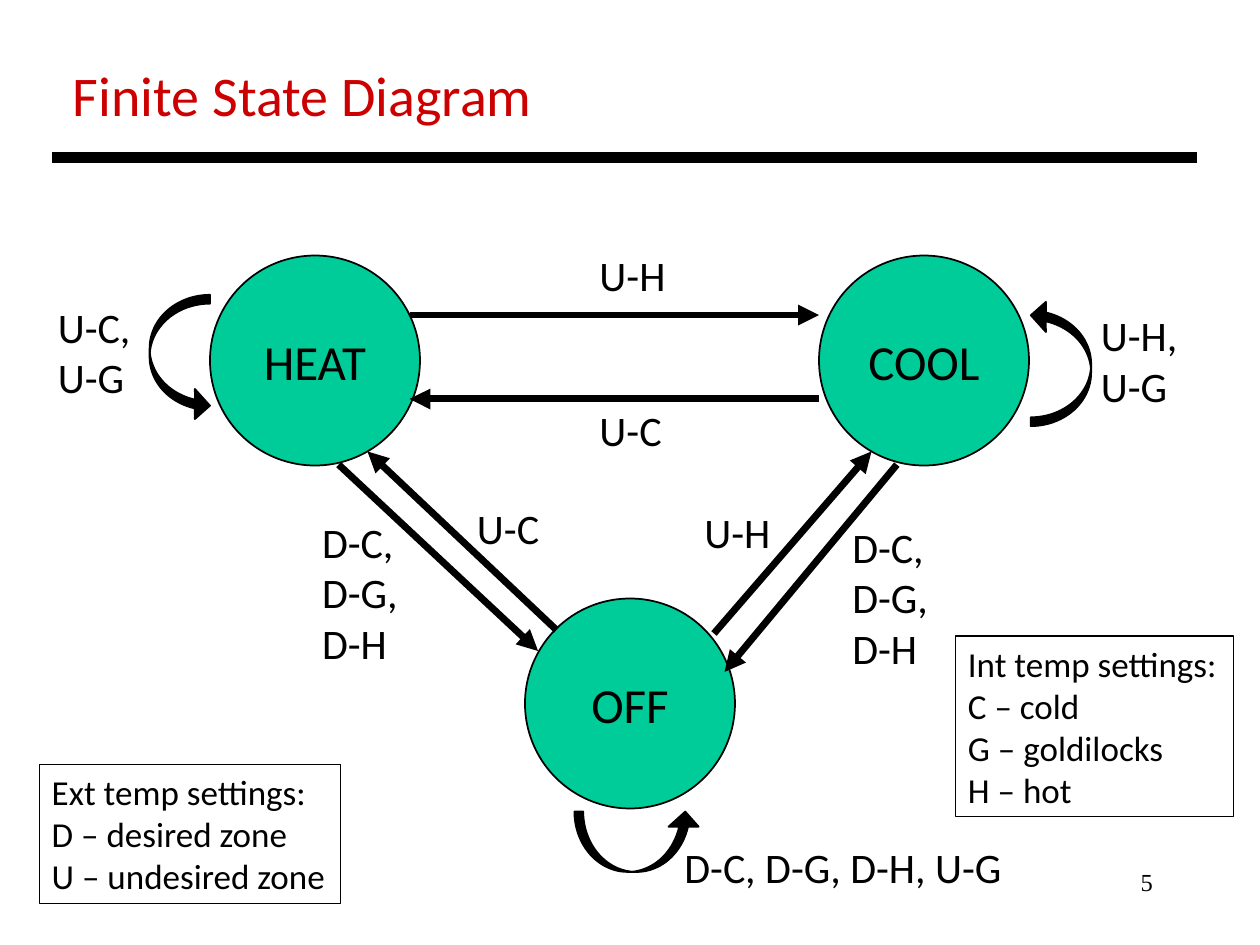
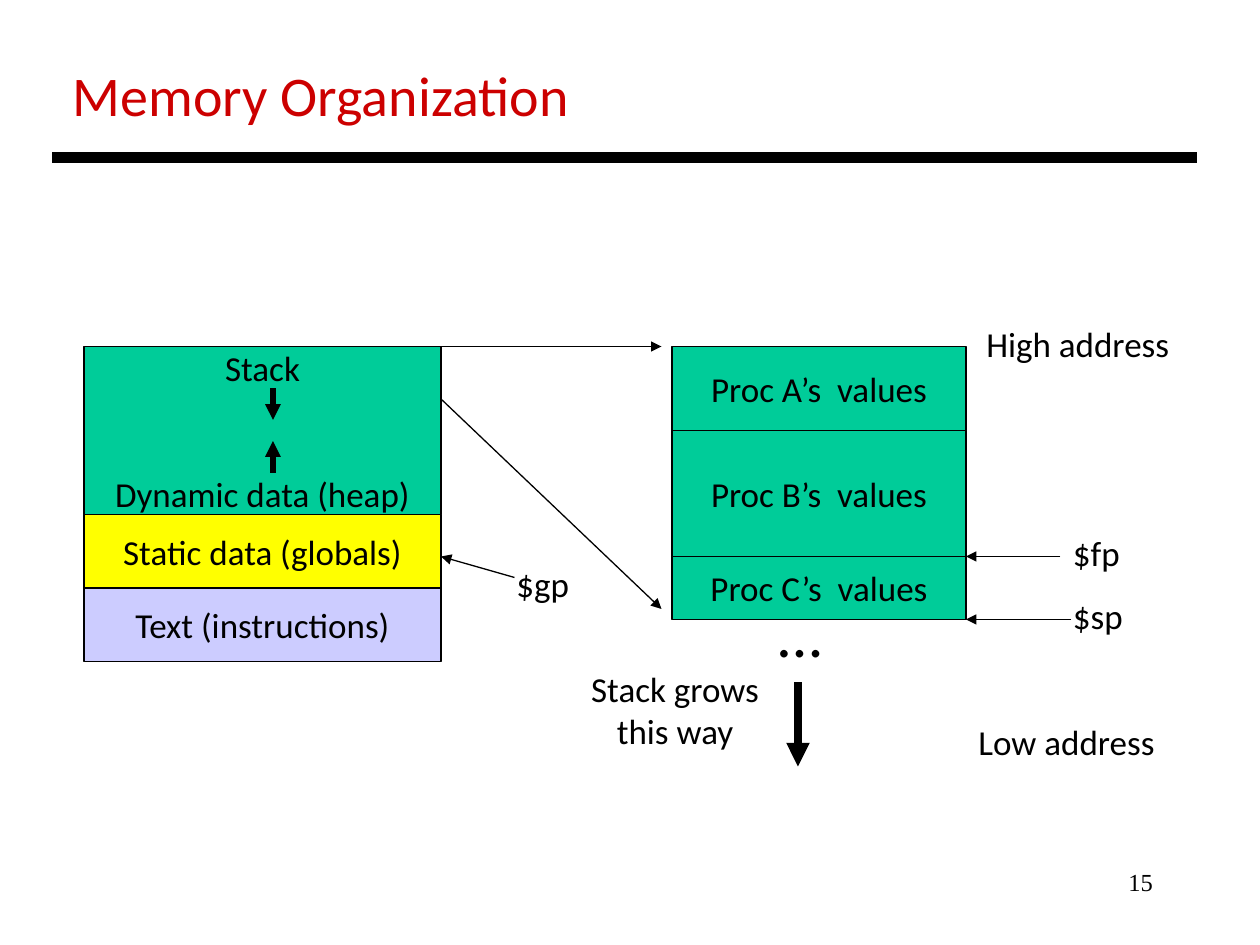
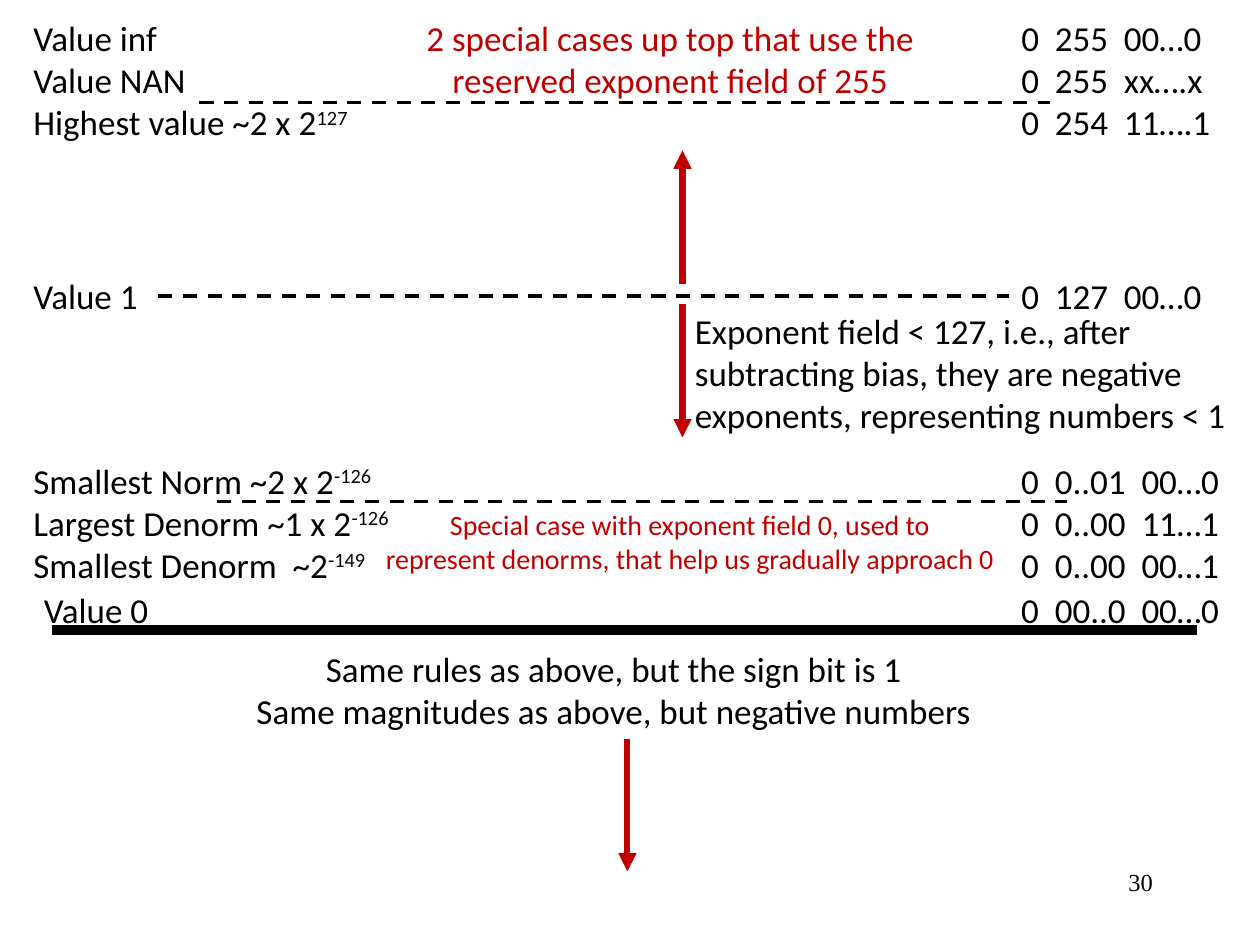
"""Build three lecture slides: a state diagram, a memory map and a float number line."""
from dataclasses import dataclass

from lxml import etree
from pptx import Presentation
from pptx.dml.color import RGBColor
from pptx.enum import dml, shapes, text
from pptx.oxml import ns
from pptx.util import Pt

LEFT, CENTER, RIGHT = text.PP_ALIGN.LEFT, text.PP_ALIGN.CENTER, text.PP_ALIGN.RIGHT
TOP, MIDDLE = text.MSO_ANCHOR.TOP, text.MSO_ANCHOR.MIDDLE
TITLE_ONLY, BLANK = 5, 6


@dataclass(frozen=True)
class Theme:
    """Colours, fonts and type sizes shared by the slides."""
    ink: RGBColor = RGBColor(0x00, 0x00, 0x00)
    title: RGBColor = RGBColor(0xCC, 0x00, 0x00)
    accent: RGBColor = RGBColor(0xC0, 0x00, 0x00)
    green: RGBColor = RGBColor(0x00, 0xCC, 0x99)
    yellow: RGBColor = RGBColor(0xFF, 0xFF, 0x00)
    lilac: RGBColor = RGBColor(0xCC, 0xCC, 0xFF)
    font: str = "Calibri"
    number_font: str = "Times New Roman"
    title_size: int = 32
    state_size: int = 28
    event_size: int = 24
    body_size: int = 20
    note_size: int = 16
    number_size: int = 14
    dots_size: int = 36


THEME = Theme()


def apply(target, values):
    """Set every attribute named in a dict of format values."""
    for name, value in values.items():
        setattr(target, name, value)


def write(frame, content, size, color=THEME.ink, align=LEFT, anchor=TOP, font=THEME.font):
    """Fill a text frame line by line; a caret starts a superscript."""
    apply(frame, {"word_wrap": False, "vertical_anchor": anchor})
    for index, line in enumerate(content.split("\n")):
        paragraph = frame.paragraphs[0] if index == 0 else frame.add_paragraph()
        paragraph.alignment = align
        base, _, power = line.partition("^")
        for part, baseline in ((base, 0), (power, 30000)):
            if not part:
                continue
            run = paragraph.add_run()
            run.text = part
            apply(run.font, {"name": font, "size": Pt(size), "bold": False})
            run.font.color.rgb = color
            if baseline:
                run.font._element.set("baseline", str(baseline))


def text_height(content, size):
    """Return the height in points of a box that fits the lines."""
    return (content.count("\n") + 1) * size * 1.2 + 7.2


def label(slide, left, top, width, content, size=THEME.body_size, **style):
    """Add free text in a box that fits it."""
    height = text_height(content, size)
    box = slide.shapes.add_textbox(Pt(left), Pt(top), Pt(width), Pt(height))
    write(box.text_frame, content, size, **style)
    box.text_frame.auto_size = text.MSO_AUTO_SIZE.SHAPE_TO_FIT_TEXT
    return box


def figure(slide, preset, left, top, width, height, fill=None, weight=0.75):
    """Add a preset shape with a black outline."""
    shape = slide.shapes.add_shape(preset, Pt(left), Pt(top), Pt(width), Pt(height))
    shape.shadow.inherit = False
    if fill is None:
        shape.fill.background()
    else:
        shape.fill.solid()
        shape.fill.fore_color.rgb = fill
    shape.line.color.rgb = THEME.ink
    shape.line.width = Pt(weight)
    return shape


def line(slide, start, end, weight, color=THEME.ink, dashed=False):
    """Add a straight line between two points."""
    stroke = slide.shapes.add_connector(shapes.MSO_CONNECTOR.STRAIGHT, *map(Pt, start + end))
    stroke.line.color.rgb = color
    stroke.line.width = Pt(weight)
    if dashed:
        stroke.line.dash_style = dml.MSO_LINE.DASH
    etree.SubElement(stroke._element.spPr, ns.qn("a:effectLst"))
    return stroke


def arrow(slide, start, end, weight, color=THEME.ink):
    """Add a line with a triangle at its end."""
    stroke = line(slide, start, end, weight, color)
    etree.SubElement(stroke.line._get_or_add_ln(), ns.qn("a:tailEnd"), type="triangle")


def state(slide, name, left, top):
    """Add a state circle."""
    circle = figure(slide, shapes.MSO_SHAPE.OVAL, left, top, 120, 120, THEME.green, 1)
    write(circle.text_frame, name, THEME.state_size, align=CENTER, anchor=MIDDLE)


def self_loop(slide, left, top, rotation):
    """Add the curved arrow of a state that stays as it is."""
    loop = figure(slide, shapes.MSO_SHAPE.CURVED_RIGHT_ARROW, left, top, 34.5, 72, THEME.ink, 1)
    loop.rotation = rotation
    for index, value in enumerate((0.147, 0.5, 0.25)):
        loop.adjustments[index] = value


def legend(slide, left, top, width, content):
    """Add an outlined key."""
    height = text_height(content, THEME.body_size)
    key = figure(slide, shapes.MSO_SHAPE.RECTANGLE, left, top, width, height)
    write(key.text_frame, content, THEME.body_size)
    key.text_frame.auto_size = text.MSO_AUTO_SIZE.SHAPE_TO_FIT_TEXT


def memory_column(slide, left, top, width, regions):
    """Stack memory regions downwards and return them."""
    blocks = []
    for content, fill, height in regions:
        block = figure(slide, shapes.MSO_SHAPE.RECTANGLE, left, top, width, height, fill)
        write(block.text_frame, content, THEME.body_size, align=CENTER, anchor=MIDDLE)
        blocks.append(block)
        top += height
    return blocks


def new_slide(deck, number, title=None, rule_top=90):
    """Add a slide with its number, heavy rule and optional title."""
    slide = deck.slides.add_slide(deck.slide_layouts[TITLE_ONLY if title else BLANK])
    if title:
        heading = slide.shapes.title
        apply(heading, {"left": Pt(34.5), "top": Pt(31), "width": Pt(302), "height": Pt(46)})
        write(heading.text_frame, title, THEME.title_size, THEME.title)
        heading.text_frame.auto_size = text.MSO_AUTO_SIZE.NONE
    label(slide, 516, 492, 150, number, THEME.number_size, align=RIGHT, font=THEME.number_font)
    line(slide, (30, rule_top), (684, rule_top), 6)
    return slide


def state_diagram(deck):
    """Draw the thermostat states and their transitions."""
    slide = new_slide(deck, "5", "Finite State Diagram")
    for name, left, top in (("HEAT", 120, 146), ("COOL", 468, 146), ("OFF", 300, 342)):
        state(slide, name, left, top)
    for start, end in (
        ((234, 180), (468, 180)),
        ((468, 228), (234, 228)),
        ((318, 360), (210, 258)),
        ((408, 362), (498, 258)),
        ((512.5, 265.5), (414, 384)),
        ((193.5, 265.5), (307.5, 372)),
    ):
        arrow(slide, start, end, 4)
    for left, top, rotation in ((347, 445, 270), (589, 171.5, 180), (85.5, 168.5, 0)):
        self_loop(slide, left, top, rotation)
    for left, top, width, events in (
        (335.5, 139, 52.5, "U-H"),
        (335.5, 227.5, 50.5, "U-C"),
        (265.5, 283.5, 50.5, "U-C"),
        (395.5, 286, 52.5, "U-H"),
        (177, 291.5, 58.5, "D-C,\nD-G,\nD-H"),
        (480, 294.5, 58.5, "D-C,\nD-G,\nD-H"),
        (384, 477.5, 197, "D-C, D-G, D-H, U-G"),
        (26, 168.5, 56, "U-C,\nU-G"),
        (622, 173.5, 59, "U-H,\nU-G"),
    ):
        label(slide, left, top, width, events, THEME.event_size)
    legend(slide, 22.5, 437, 172, "Ext temp settings:\nD – desired zone\nU – undesired zone")
    legend(slide, 546, 363.5, 159, "Int temp settings:\nC – cold\nG – goldilocks\nH – hot")


def memory_map(deck):
    """Draw the memory layout and a close view of its stack."""
    slide = new_slide(deck, "15", "Memory Organization")
    stack_and_heap = memory_column(slide, 48, 198, 204, (
        ("Stack\nDynamic data (heap)", THEME.green, 96),
        ("Static data (globals)", THEME.yellow, 42),
        ("Text (instructions)", THEME.lilac, 42),
    ))[0]
    stack_and_heap.text_frame.paragraphs[1].space_before = Pt(48)
    memory_column(slide, 384, 198, 168, (
        ("Proc A’s  values", THEME.green, 48),
        ("Proc B’s  values", THEME.green, 72),
        ("Proc C’s  values", THEME.green, 36),
    ))
    for start, end, weight in (
        ((156, 222), (156, 240), 3),
        ((156, 270), (156, 252), 3),
        ((456, 390), (456, 438), 4.5),
        ((252, 198), (378, 198), 0.75),
        ((252, 228), (378, 348), 0.75),
        ((606, 318), (552, 318), 0.75),
        ((612, 354), (552, 354), 0.75),
        ((294, 330), (252, 318), 0.75),
    ):
        arrow(slide, start, end, weight)
    label(slide, 438, 336, 39.5, "…", THEME.dots_size)
    label(slide, 330, 378, 111.5, "Stack grows\nthis way", align=CENTER)
    for left, top, width, caption in (
        (556.5, 181, 120, "High address"),
        (552, 408, 116, "Low address"),
        (606, 300, 42.5, "$fp"),
        (606, 336, 43, "$sp"),
        (288, 318, 44.5, "$gp"),
    ):
        label(slide, left, top, width, caption)


def float_line(deck):
    """Draw the range of floating point values and their bit fields."""
    slide = new_slide(deck, "30", rule_top=360)
    for left, top, width, values in (
        (12, 6, 198, "Value inf\nValue NAN\nHighest value ~2 x 2^127"),
        (12, 153.5, 75, "Value 1"),
        (12, 259, 222.5, "Smallest Norm ~2 x 2^-126\nLargest Denorm ~1 x 2^-126\n"
                         "Smallest Denorm  ~2^-149"),
        (18, 332.5, 75, "Value 0"),
        (390, 173.5, 321, "Exponent field < 127, i.e., after\nsubtracting bias, they are negative\n"
                          "exponents, representing numbers < 1"),
    ):
        label(slide, left, top, width, values)
    bits_left = 576.5
    label(slide, bits_left, 6, 123, "0  255  00…0\n0  255  xx….x\n0  254  11….1")
    one_bits = label(slide, bits_left, 153.5, 118, "0  127  00…0")
    label(slide, bits_left, 259, 128, "0  0..01  00…0\n0  0..00  11…1\n0  0..00  00…1")
    label(slide, bits_left, 332.5, 128, "0  00..0  00…0")
    label(slide, 138, 366.5, 425.5, "Same rules as above, but the sign bit is 1\n"
          "Same magnitudes as above, but negative numbers", align=CENTER)
    label(slide, 235, 6, 296, "2 special cases up top that use the\n"
          "reserved exponent field of 255", color=THEME.accent, align=CENTER)
    label(slide, 211, 286.5, 366.5, "Special case with exponent field 0, used to\n"
          "represent denorms, that help us gradually approach 0",
          THEME.note_size, color=THEME.accent, align=CENTER)
    line(slide, (90.5, 169.1), (bits_left, 169.1), 2, dashed=True).end_connect(one_bits, 1)
    for left, top in ((114, 58.5), (124, 286.5)):
        line(slide, (left, top), (left + 486, top), 2, dashed=True)
    for left, start, end in ((358.5, 422.5, 498), (390, 174, 250), (390, 162, 86)):
        arrow(slide, (left, start), (left, end), 3.5, THEME.accent)


def main():
    """Build and save the deck."""
    deck = Presentation()
    apply(deck, {"slide_width": Pt(720), "slide_height": Pt(540)})
    for build in (state_diagram, memory_map, float_line):
        build(deck)
    deck.save("out.pptx")


if __name__ == "__main__":
    main()
